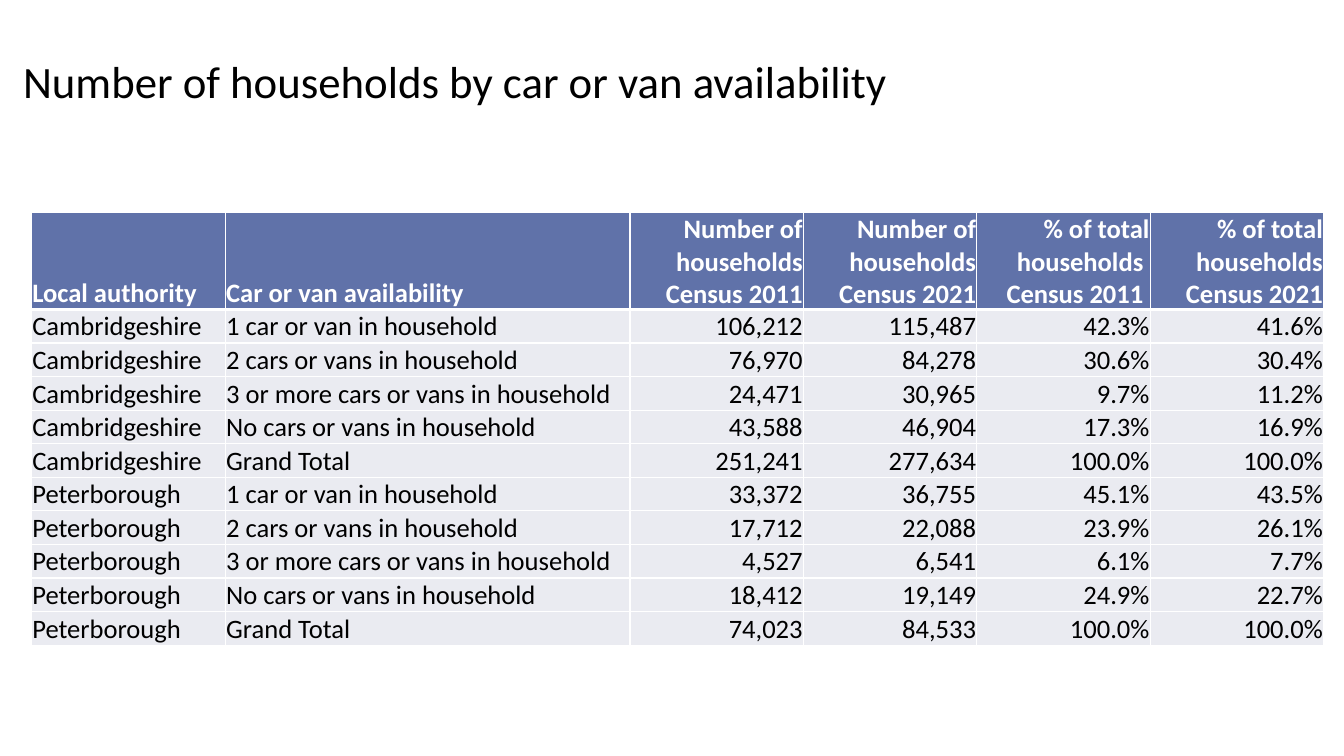
from lxml.etree import SubElement
from pptx import Presentation
from pptx.dml.color import RGBColor
from pptx.enum.text import MSO_ANCHOR, PP_ALIGN
from pptx.oxml.ns import qn
from pptx.util import Pt

FONT = "Calibri"
WHITE, BLACK = "FFFFFF", "000000"
HEADER_FILL, BODY_FILL = "6072A9", "EAEBF1"
COLUMN_WIDTHS = [138.5, 289.1, 123.85, 123.85, 123.85, 123.85]
HEADER_HEIGHT, ROW_HEIGHT = 69, 24
HEADERS = [
    "Local authority",
    "Car or van availability",
    "Number of households Census 2011",
    "Number of households Census 2021",
    "% of total households \nCensus 2011 ",
    "% of total households\nCensus 2021",
]
AVAILABILITY = [
    "1 car or van in household",
    "2 cars or vans in household",
    "3 or more cars or vans in household",
    "No cars or vans in household",
    "Grand Total",
]
FIGURES = {
    "Cambridgeshire": [
        ("106,212", "115,487", "42.3%", "41.6%"),
        ("76,970", "84,278", "30.6%", "30.4%"),
        ("24,471", "30,965", "9.7%", "11.2%"),
        ("43,588", "46,904", "17.3%", "16.9%"),
        ("251,241", "277,634", "100.0%", "100.0%"),
    ],
    "Peterborough": [
        ("33,372", "36,755", "45.1%", "43.5%"),
        ("17,712", "22,088", "23.9%", "26.1%"),
        ("4,527", "6,541", "6.1%", "7.7%"),
        ("18,412", "19,149", "24.9%", "22.7%"),
        ("74,023", "84,533", "100.0%", "100.0%"),
    ],
}


def color(hex_string):
    return RGBColor.from_string(hex_string)


def write_text(text_frame, text, size, fill=BLACK, bold=False,
               align=PP_ALIGN.LEFT, line_spacing=None):
    text_frame.word_wrap = True
    text_frame.text = text
    for paragraph in text_frame.paragraphs:
        paragraph.alignment = align
        paragraph.line_spacing = line_spacing
        for run in paragraph.runs:
            run.font.name = FONT
            run.font.size = Pt(size)
            run.font.bold = bold
            run.font.color.rgb = color(fill)


def set_borders(cell, top, bottom):
    properties = cell._tc.get_or_add_tcPr()
    for tag, width in (("a:lnL", 1), ("a:lnR", 1), ("a:lnT", top), ("a:lnB", bottom)):
        line = SubElement(properties, qn(tag), w=str(Pt(width)))
        fill = SubElement(line, qn("a:solidFill"))
        SubElement(fill, qn("a:srgbClr"), val=WHITE)


def add_title(slide, left, top, width, height):
    title = slide.shapes.add_textbox(Pt(left), Pt(top), Pt(width), Pt(height))
    title.text_frame.vertical_anchor = MSO_ANCHOR.MIDDLE
    write_text(title.text_frame, "Number of households by car or van availability",
               size=32, line_spacing=0.9)


def add_household_table(slide, left, top):
    rows = [HEADERS] + [
        [authority, availability, *values]
        for authority, figures in FIGURES.items()
        for availability, values in zip(AVAILABILITY, figures)
    ]
    heights = [HEADER_HEIGHT] + [ROW_HEIGHT] * (len(rows) - 1)
    table = slide.shapes.add_table(
        len(rows), len(HEADERS), Pt(left), Pt(top),
        Pt(sum(COLUMN_WIDTHS)), Pt(sum(heights))).table
    for column, width in zip(table.columns, COLUMN_WIDTHS):
        column.width = Pt(width)
    for row_index, values in enumerate(rows):
        table.rows[row_index].height = Pt(heights[row_index])
        is_header = row_index == 0
        for column_index, value in enumerate(values):
            cell = table.cell(row_index, column_index)
            cell.margin_left = cell.margin_right = cell.margin_top = Pt(0.6)
            cell.margin_bottom = Pt(0)
            cell.vertical_anchor = MSO_ANCHOR.BOTTOM
            write_text(cell.text_frame, value, size=19, bold=is_header,
                       fill=WHITE if is_header else BLACK,
                       align=PP_ALIGN.RIGHT if column_index > 1 else PP_ALIGN.LEFT)
            set_borders(cell, top=3 if row_index == 1 else 1,
                        bottom=3 if is_header else 1)
            cell.fill.solid()
            cell.fill.fore_color.rgb = color(HEADER_FILL if is_header else BODY_FILL)


def main():
    presentation = Presentation()
    presentation.slide_width = Pt(960)
    presentation.slide_height = Pt(540)
    slide = presentation.slides.add_slide(presentation.slide_layouts[6])
    add_title(slide, 9.4, 11.5, 635.8, 97.2)
    add_household_table(slide, 22.5, 152)
    presentation.save("out.pptx")


if __name__ == "__main__":
    main()
